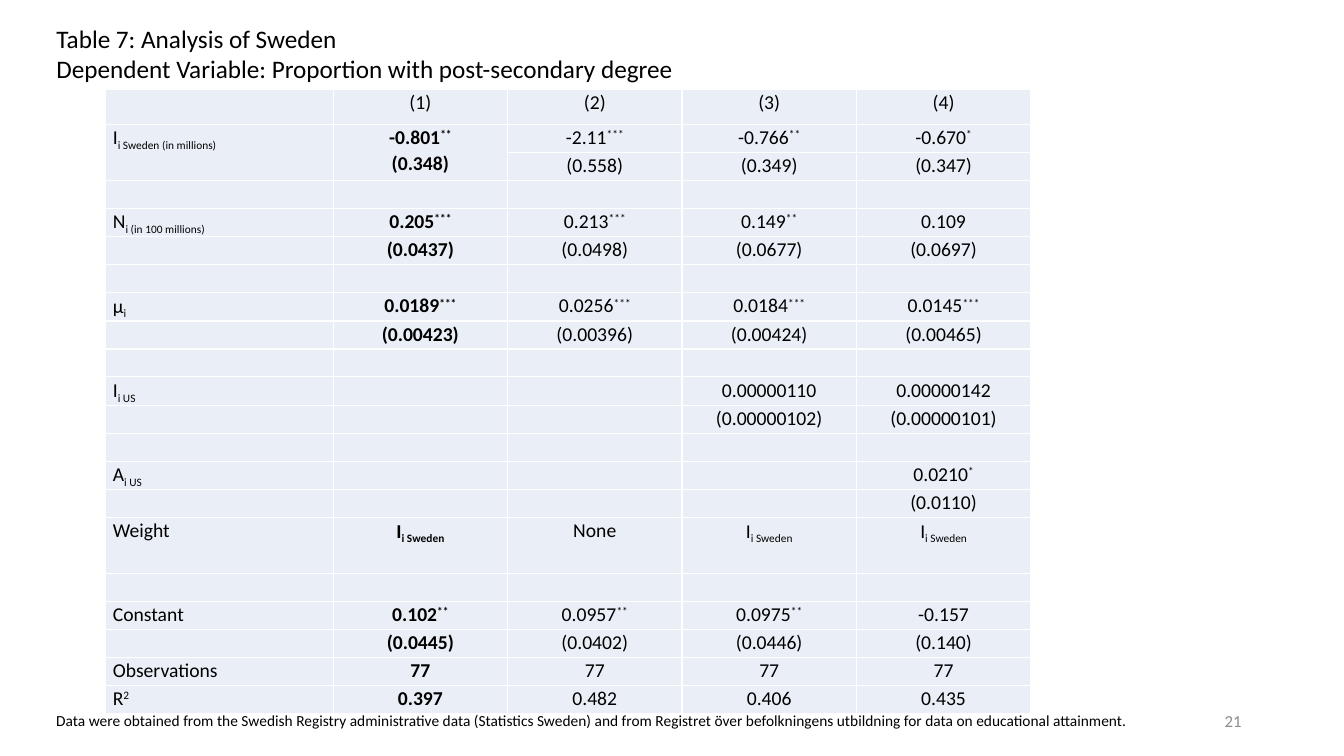
from dataclasses import dataclass

from lxml import etree
from pptx import Presentation
from pptx.dml.color import RGBColor
from pptx.enum import text
from pptx.oxml import ns
from pptx.util import Pt

FONT = "Calibri"
BLACK = RGBColor(0x00, 0x00, 0x00)
GRAY = RGBColor(0x8C, 0x8C, 0x8C)
WHITE = RGBColor(0xFF, 0xFF, 0xFF)
PALE_BLUE = RGBColor(0xEA, 0xEF, 0xF7)

LEFT, CENTER, RIGHT = text.PP_ALIGN.LEFT, text.PP_ALIGN.CENTER, text.PP_ALIGN.RIGHT
BASELINES = {"_": "-25000", "^": "30000"}
TABLE_SIZE = 14
LABEL_WIDTH, MODEL_WIDTH = 162.4, 124.6
MODELS = 4


@dataclass
class Row:
    label: str = ""
    values: tuple[str, ...] = ("",) * MODELS
    height: float = 20


# In cell texts, "_" starts a subscript and "^" a superscript.
ROWS = [
    Row("", ("(1)", "(2)", "(3)", "(4)"), 25),
    Row("I_i Sweden (in millions)",
        ("-0.801^**\n(0.348)", "-2.11^***", "-0.766^**", "-0.670^*")),
    Row("", ("", "(0.558)", "(0.349)", "(0.347)")),
    Row(),
    Row("N_i (in 100 millions)", ("0.205^***", "0.213^***", "0.149^**", "0.109")),
    Row("", ("(0.0437)", "(0.0498)", "(0.0677)", "(0.0697)")),
    Row(),
    Row("μ_i", ("0.0189^***", "0.0256^***", "0.0184^***", "0.0145^***")),
    Row("", ("(0.00423)", "(0.00396)", "(0.00424)", "(0.00465)")),
    Row(),
    Row("I_i US", ("", "", "0.00000110", "0.00000142")),
    Row("", ("", "", "(0.00000102)", "(0.00000101)")),
    Row(),
    Row("A_i US", ("", "", "", "0.0210^*")),
    Row("", ("", "", "", "(0.0110)")),
    Row("Weight", ("I_i Sweden", "None", "I_i Sweden", "I_i Sweden"), 40),
    Row(),
    Row("Constant", ("0.102^**", "0.0957^**", "0.0975^**", "-0.157")),
    Row("", ("(0.0445)", "(0.0402)", "(0.0446)", "(0.140)")),
    Row("Observations", ("77",) * MODELS),
    Row("R^2", ("0.397", "0.482", "0.406", "0.435")),
]


def format_paragraph(p, size: float, color: RGBColor, align, bold: bool = False) -> None:
    p.alignment = align
    for r in p.runs:
        r.font.name, r.font.size, r.font.bold = FONT, Pt(size), bold
        r.font.color.rgb = color


def add_marked_runs(p, content: str) -> None:
    """Add the text as one run, or as two when a script marker splits it."""
    mark = next((m for m in BASELINES if m in content), None)
    base, _, script = content.partition(mark) if mark else (content, "", "")
    p.add_run().text = base
    if mark:
        r = p.add_run()
        r.text = script
        r._r.get_or_add_rPr().set("baseline", BASELINES[mark])


def add_borders(cell) -> None:
    tc_pr = cell._tc.get_or_add_tcPr()
    for i, side in enumerate(("lnL", "lnR", "lnT", "lnB")):
        ln = etree.Element(ns.qn(f"a:{side}"), w=str(Pt(1)))
        fill = etree.SubElement(ln, ns.qn("a:solidFill"))
        etree.SubElement(fill, ns.qn("a:srgbClr"), val=str(WHITE))
        tc_pr.insert(i, ln)


def fill_cell(cell, content: str, align, bold: bool) -> None:
    cell.margin_left = cell.margin_right = Pt(5)
    cell.margin_top = cell.margin_bottom = Pt(0)
    cell.fill.solid()
    cell.fill.fore_color.rgb = PALE_BLUE
    add_borders(cell)
    tf = cell.text_frame
    for i, line in enumerate(content.split("\n")):
        p = tf.add_paragraph() if i else tf.paragraphs[0]
        p.line_spacing = 1.07
        if line:
            add_marked_runs(p, line)
        else:
            etree.SubElement(p._p, ns.qn("a:endParaRPr"), sz=str(TABLE_SIZE * 100))
        format_paragraph(p, TABLE_SIZE, BLACK, align, bold)


def add_results_table(s) -> None:
    width = LABEL_WIDTH + MODELS * MODEL_WIDTH
    height = sum(row.height for row in ROWS)
    table = s.shapes.add_table(len(ROWS), MODELS + 1, Pt(75.6), Pt(63.8),
                               Pt(width), Pt(height)).table
    table.first_row = table.horz_banding = False
    for c, column in enumerate(table.columns):
        column.width = Pt(MODEL_WIDTH if c else LABEL_WIDTH)
    for r, row in enumerate(ROWS):
        table.rows[r].height = Pt(row.height)
        for c, content in enumerate((row.label, *row.values)):
            bold = c == 1 and r > 0
            fill_cell(table.cell(r, c), content, CENTER if c else LEFT, bold)
    for c in (0, 1):
        table.cell(1, c).merge(table.cell(2, c))


def add_title(s) -> None:
    title = s.shapes.title
    title.left, title.top, title.width, title.height = Pt(33.1), Pt(13), Pt(877), Pt(50.4)
    tf = title.text_frame
    tf.auto_size = text.MSO_AUTO_SIZE.NONE
    tf.vertical_anchor = text.MSO_ANCHOR.BOTTOM
    tf.text = ("Table 7: Analysis of Sweden\n"
               "Dependent Variable: Proportion with post-secondary degree")
    for p in tf.paragraphs:
        format_paragraph(p, 18, BLACK, LEFT)


def add_text(s, box: tuple[float, ...], content: str, size: float,
             color: RGBColor, align, anchor) -> None:
    tf = s.shapes.add_textbox(*map(Pt, box)).text_frame
    tf.word_wrap = True
    tf.vertical_anchor = anchor
    tf.text = content
    format_paragraph(tf.paragraphs[0], size, color, align)


def main() -> None:
    prs = Presentation()
    prs.slide_width, prs.slide_height = Pt(960), Pt(540)
    s = prs.slides.add_slide(prs.slide_layouts[5])
    add_title(s)
    add_results_table(s)
    add_text(s, (33.1, 504.7, 833, 20.6),
             "Data were obtained from the Swedish Registry administrative data "
             "(Statistics Sweden) and from Registret över befolkningens utbildning "
             "for data on educational attainment.",
             11, BLACK, LEFT, text.MSO_ANCHOR.TOP)
    add_text(s, (678, 500.5, 216, 28.8), "21", 12, GRAY, RIGHT, text.MSO_ANCHOR.MIDDLE)
    prs.save("out.pptx")


if __name__ == "__main__":
    main()
